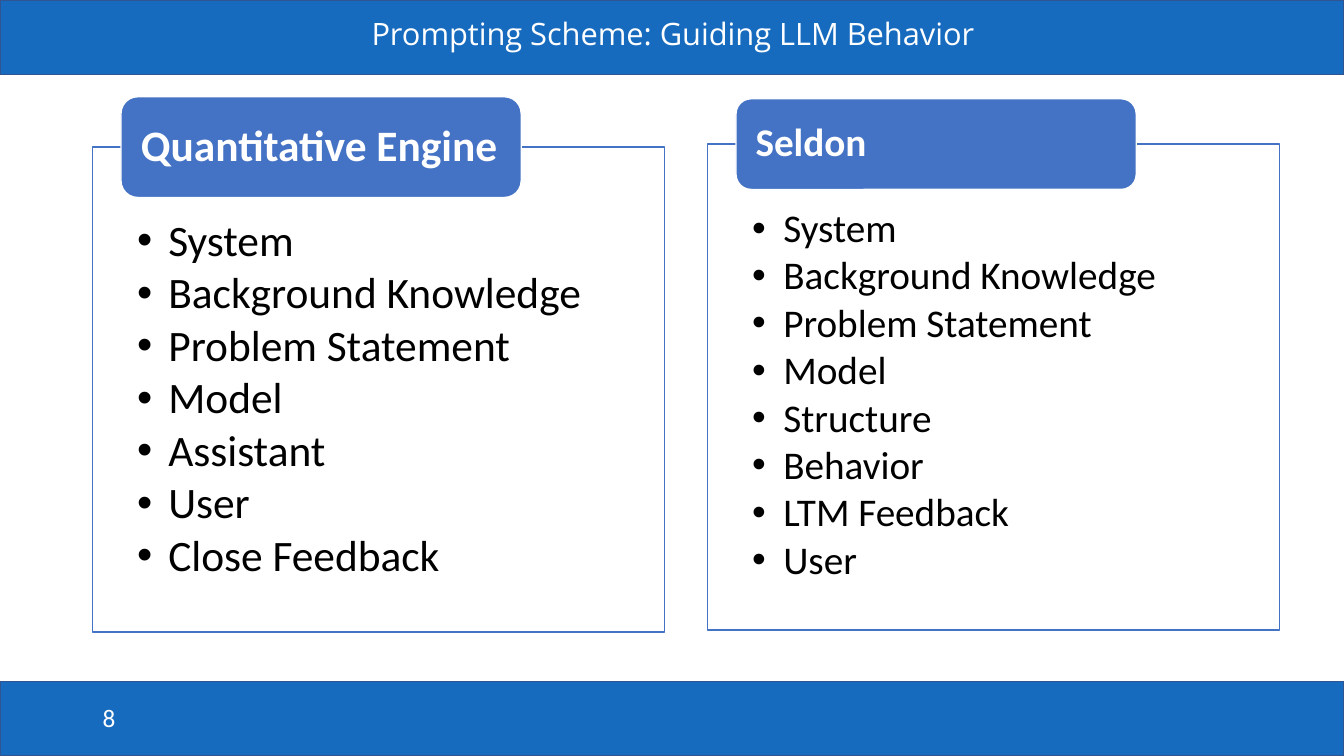
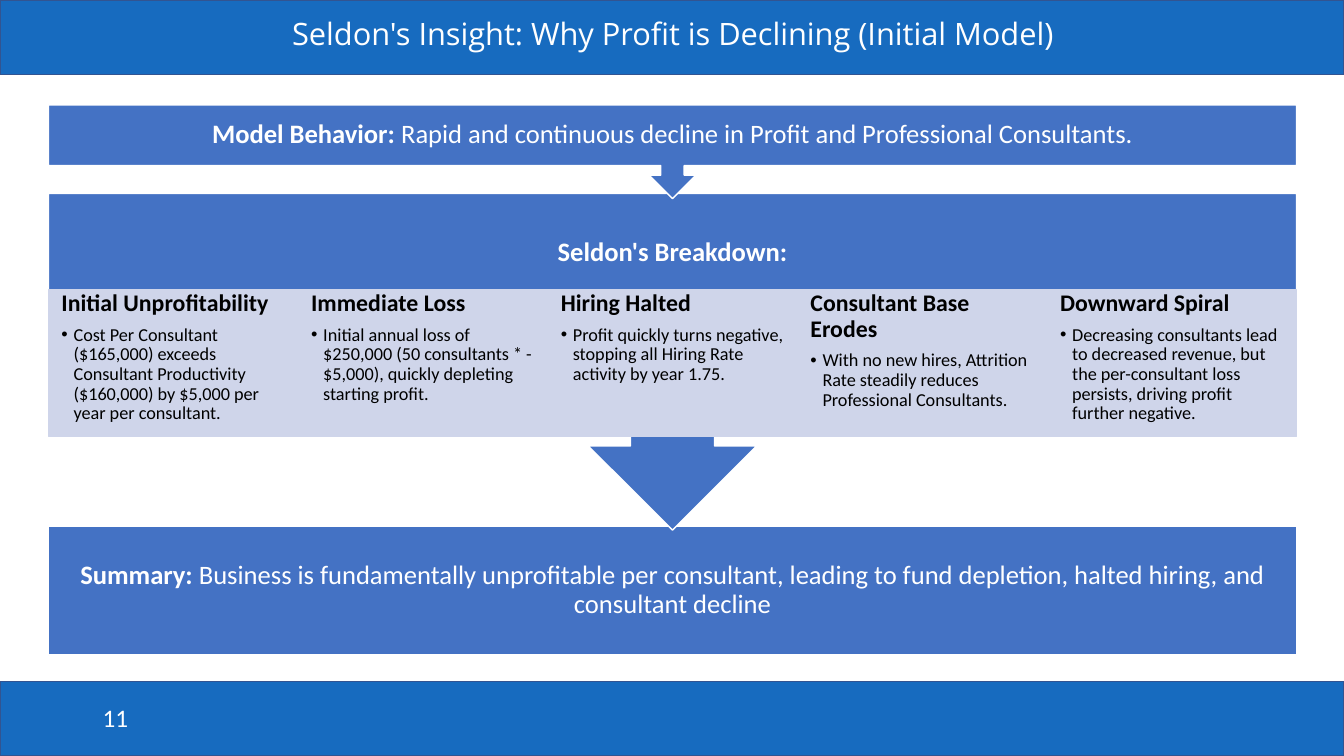
from dataclasses import dataclass

from lxml import etree
from pptx import Presentation
from pptx.dml.color import RGBColor
from pptx.enum.shapes import MSO_SHAPE
from pptx.enum.text import MSO_ANCHOR, MSO_AUTO_SIZE, PP_ALIGN
from pptx.oxml.ns import qn
from pptx.util import Inches, Pt


@dataclass(frozen=True)
class Theme:
    band: str = "176BBF"
    band_edge: str = "325491"
    accent: str = "4472C4"
    tint: str = "CFD5EA"
    white: str = "FFFFFF"
    black: str = "000000"
    title_font: str = "Open Sans"
    body_font: str = "Calibri"
    title_size: int = 22
    page_size: int = 18
    statement_size: int = 19
    cause_size: int = 17
    detail_size: int = 13


theme = Theme()


def add_box(slide, kind, at, fill, line, insets=(0.1, 0.05, 0.1, 0.05), anchor=MSO_ANCHOR.MIDDLE):
    """Add a flat shape; at is left, top, width, height and insets run left, top, right, bottom."""
    box = slide.shapes.add_shape(kind, *map(Inches, at))
    box.shadow.inherit = False
    box.fill.solid()
    box.fill.fore_color.rgb = RGBColor.from_string(fill)
    box.line.color.rgb = RGBColor.from_string(line)
    box.line.width = Pt(1)
    frame = box.text_frame
    frame.word_wrap = True
    frame.vertical_anchor = anchor
    frame.margin_left, frame.margin_top, frame.margin_right, frame.margin_bottom = map(Inches, insets)
    return box


def write(frame, text, size, color, lead="", font=theme.body_font,
          align=PP_ALIGN.LEFT, after=0, indent=0):
    """Write the next paragraph: a bold lead, then plain text; an indent makes it a bullet."""
    paragraph = frame.paragraphs[0] if not frame.text else frame.add_paragraph()
    paragraph.text = lead or text
    if lead and text:
        paragraph.add_run().text = text
    paragraph.alignment = align
    paragraph.line_spacing = 0.9
    paragraph.space_after = Pt(after)
    if indent:
        properties = paragraph._p.get_or_add_pPr()
        properties.set("marL", str(Inches(indent)))
        properties.set("indent", str(-Inches(indent)))
        etree.SubElement(properties, qn("a:buFont")).set("typeface", "Arial")
        etree.SubElement(properties, qn("a:buChar")).set("char", "•")
    for position, run in enumerate(paragraph.runs):
        run.font.name = font
        run.font.size = Pt(size)
        run.font.bold = bool(lead) and position == 0
        run.font.color.rgb = RGBColor.from_string(color)


prs = Presentation()
prs.slide_width, prs.slide_height = Inches(13.33), Inches(7.5)
title_only = prs.slide_layouts[5]

pages = [
    ("8", "Prompting Scheme: Guiding LLM Behavior"),
    ("11", "Seldon's Insight: Why Profit is Declining (Initial Model)"),
]
for page, heading in pages:
    slide = prs.slides.add_slide(title_only)
    title = slide.shapes.title
    title.left, title.top, title.width, title.height = map(Inches, (0.93, 0.13, 11.49, 0.45))
    title.text_frame.vertical_anchor = MSO_ANCHOR.MIDDLE
    title.text_frame.auto_size = MSO_AUTO_SIZE.NONE
    write(title.text_frame, heading, theme.title_size, theme.white,
          font=theme.title_font, align=PP_ALIGN.CENTER)
    page_number = slide.shapes.add_textbox(*map(Inches, (0.92, 6.95, 3, 0.4)))
    page_number.text_frame.word_wrap = True
    write(page_number.text_frame, page, theme.page_size, theme.white)

prompting, insight = prs.slides

# The layout carries both bands, so every slide shows them
for top in (0, 6.76):
    band = add_box(prompting, MSO_SHAPE.RECTANGLE, (0, top, 13.33, 0.74), theme.band, theme.band_edge)
    title_only.shapes._spTree.insert(2, band._element)

# Prompting scheme: two lists, each with a tab over its top edge
panels = [
    ("Quantitative Engine", 31, (0.92, 1.46, 5.67, 4.81), 1.0, 0.71,
     ["System", "Background Knowledge", "Problem Statement", "Model",
      "Assistant", "User", "Close Feedback"]),
    ("Seldon", 28, (7.02, 1.43, 5.67, 4.82), 0.9, 0.64,
     ["System", "Background Knowledge", "Problem Statement", "Model",
      "Structure", "Behavior", "LTM Feedback", "User"]),
]
for name, size, at, tab_height, top_inset, parts in panels:
    panel = add_box(prompting, MSO_SHAPE.RECTANGLE, at, theme.white, theme.accent,
                    (0.44, top_inset, 0.44, 0.22), MSO_ANCHOR.TOP)
    for part in parts:
        write(panel.text_frame, part, size, theme.black, after=round(size * 0.13, 1), indent=0.31)
    tab = add_box(prompting, MSO_SHAPE.ROUNDED_RECTANGLE,
                  (at[0] + 0.28, at[1] - tab_height / 2, 3.97, tab_height),
                  theme.accent, theme.white, (0.15, 0, 0.15, 0))
    write(tab.text_frame, "", size, theme.white, lead=name)

# Insight: behavior, breakdown and summary, read from top to bottom
left, width = 0.48, 12.38
statements = [
    (MSO_SHAPE.RECTANGLE, 5.22, 1.28, 0.15, "Summary:",
     " Business is fundamentally unprofitable per consultant, leading to fund depletion, "
     "halted hiring, and consultant decline"),
    (MSO_SHAPE.DOWN_ARROW_CALLOUT, 1.92, 3.34, 1.15, "Seldon's Breakdown:", ""),
    (MSO_SHAPE.DOWN_ARROW_CALLOUT, 1.04, 0.93, 0.15, "Model Behavior:",
     " Rapid and continuous decline in Profit and Professional Consultants."),
]
for kind, top, height, bottom_inset, lead, text in statements:
    statement = add_box(insight, kind, (left, top, width, height), theme.accent, theme.white,
                        (0.15, 0.15, 0.15, bottom_inset))
    write(statement.text_frame, text, theme.statement_size, theme.white,
          lead=lead, align=PP_ALIGN.CENTER)

causes = [
    ("Initial Unprofitability",
     "Cost Per Consultant ($165,000) exceeds Consultant Productivity ($160,000) "
     "by $5,000 per year per consultant."),
    ("Immediate Loss",
     "Initial annual loss of $250,000 (50 consultants * -$5,000), quickly depleting starting profit."),
    ("Hiring Halted",
     "Profit quickly turns negative, stopping all Hiring Rate activity by year 1.75."),
    ("Consultant Base Erodes",
     "With no new hires, Attrition Rate steadily reduces Professional Consultants."),
    ("Downward Spiral",
     "Decreasing consultants lead to decreased revenue, but the per-consultant loss persists, "
     "driving profit further negative."),
]
cause_width = width / len(causes)
for column, (name, detail) in enumerate(causes):
    cause = add_box(insight, MSO_SHAPE.RECTANGLE,
                    (left + column * cause_width, 2.87, cause_width, 1.46),
                    theme.tint, theme.tint, (0.13, 0.02, 0.13, 0.02), MSO_ANCHOR.TOP)
    write(cause.text_frame, "", theme.cause_size, theme.black, lead=name, after=6)
    write(cause.text_frame, detail, theme.detail_size, theme.black, indent=0.12)

prs.save("out.pptx")
